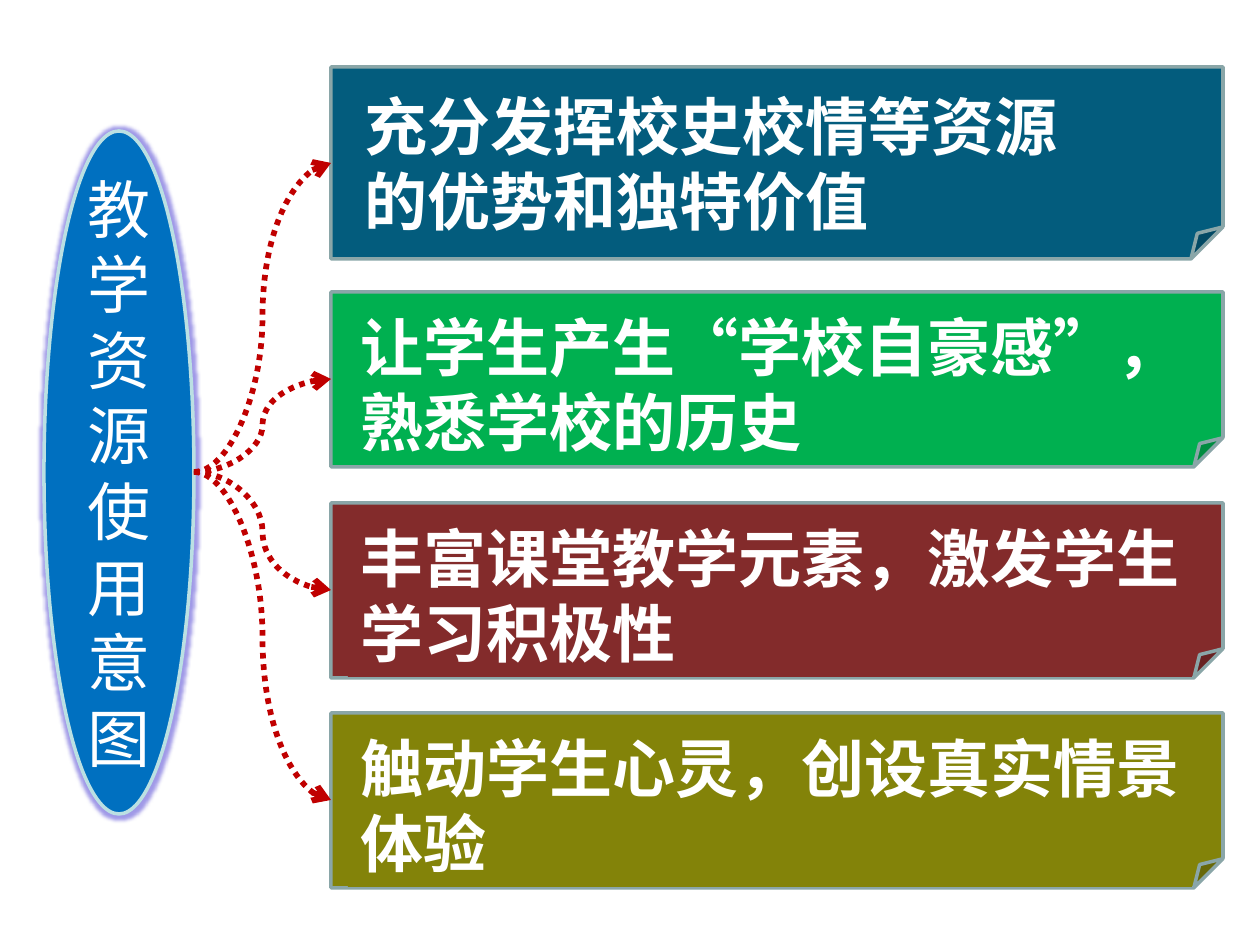
from lxml.etree import SubElement
from pptx import Presentation
from pptx.dml.color import RGBColor
from pptx.enum.dml import MSO_LINE
from pptx.enum.lang import MSO_LANGUAGE_ID
from pptx.enum.shapes import MSO_CONNECTOR, MSO_SHAPE
from pptx.enum.text import MSO_ANCHOR, PP_ALIGN
from pptx.oxml.ns import qn
from pptx.util import Inches, Pt

FONT = "Noto Sans CJK SC"
WHITE = "FFFFFF"


def px(value):
    return round(value * Inches(1) / 126)


def color(code):
    return RGBColor.from_string(code)


class Canvas:
    def __init__(self, page):
        self.page = page

    def shape(self, kind, frame, fill, line):
        shape = self.page.shapes.add_shape(kind, *map(px, frame))
        shape.shadow.inherit = False
        shape.fill.solid()
        shape.fill.fore_color.rgb = color(fill)
        shape.line.color.rgb = color(line)
        shape.line.width = Pt(2)
        return shape

    def label(self, shape, text, align, bold=False):
        shape.text_frame.word_wrap = True
        para = shape.text_frame.paragraphs[0]
        para.text = text
        para.alignment = align
        font = para.font
        font.name = FONT
        font.size = Pt(36)
        font.bold = bold
        font.color.rgb = color(WHITE)
        font.language_id = MSO_LANGUAGE_ID.SIMPLIFIED_CHINESE
        defaults = para._p.pPr.find(qn("a:defRPr"))
        SubElement(defaults, qn("a:ea"), typeface=FONT)

    def title(self, frame, text, fill, line, glow):
        oval = self.shape(MSO_SHAPE.OVAL, frame, fill, line)
        oval.text_frame.vertical_anchor = MSO_ANCHOR.MIDDLE
        self.label(oval, text, PP_ALIGN.CENTER)
        effects = oval._element.spPr.find(qn("a:effectLst"))
        halo = SubElement(effects, qn("a:glow"), rad=str(px(8)))
        tone = SubElement(halo, qn("a:srgbClr"), val=glow)
        SubElement(tone, qn("a:alpha"), val="60000")

    def card(self, frame, text_frame, text, fill, filled_text):
        self.shape(MSO_SHAPE.FOLDED_CORNER, frame, fill, "8AA6A8")
        box = self.page.shapes.add_textbox(*map(px, text_frame))
        if filled_text:
            box.fill.solid()
            box.fill.fore_color.rgb = color(fill)
        self.label(box, text, PP_ALIGN.LEFT, bold=True)

    def arrow(self, start, end, code):
        arrow = self.page.shapes.add_connector(
            MSO_CONNECTOR.CURVE, *map(px, start + end))
        arrow.line.color.rgb = color(code)
        arrow.line.width = Pt(3.25)
        arrow.line.dash_style = MSO_LINE.ROUND_DOT
        SubElement(arrow.line._get_or_add_ln(), qn("a:tailEnd"), type="arrow")
        SubElement(arrow._element.spPr, qn("a:effectLst"))


def main():
    deck = Presentation()
    deck.slide_width, deck.slide_height = px(1260), px(945)
    canvas = Canvas(deck.slides.add_slide(deck.slide_layouts[6]))

    canvas.title((44, 131, 150, 683), "教学资源使用意图", "0070C0", "BBE0E3", "6257D8")

    left, width = 331, 892
    text_height = 164
    cards = [
        (67, 192, 352, 775, 14, "充分发挥校史校情等资源的优势和独特价值", "035C7D", False),
        (292, 175, 348, 844, 10, "让学生产生“学校自豪感”，熟悉学校的历史", "00B050", False),
        (503, 175, 348, 844, 10, "丰富课堂教学元素，激发学生学习积极性", "832B2B", True),
        (713, 175, 348, 844, 10, "触动学生心灵，创设真实情景体验", "838309", True),
    ]
    for top, height, text_left, text_width, inset, text, fill, filled_text in cards:
        canvas.card((left, top, width, height),
                    (text_left, top + inset, text_width, text_height),
                    text, fill, filled_text)
    for top, height, *_ in cards:
        canvas.arrow((194, 472), (left, top + height // 2), "C00000")

    deck.save("out.pptx")


if __name__ == "__main__":
    main()
